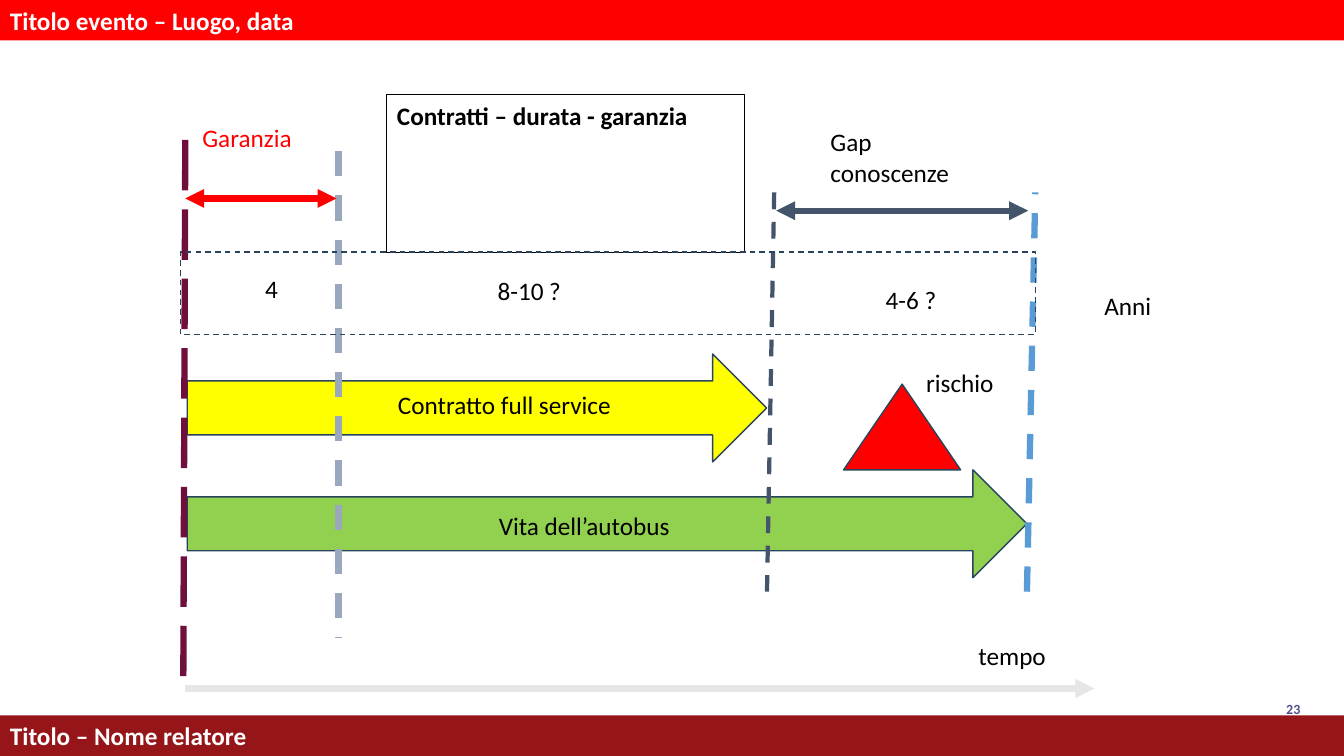
from lxml.etree import SubElement
from pptx import Presentation
from pptx.dml.color import RGBColor as Rgb
from pptx.enum.dml import MSO_LINE as Dash
from pptx.enum.shapes import MSO_CONNECTOR as Conn, MSO_SHAPE as Kind
from pptx.enum.text import MSO_ANCHOR as Anchor, MSO_AUTO_SIZE as Auto, PP_ALIGN as Align
from pptx.oxml.ns import qn
from pptx.util import Cm, Pt

HUES = {
    "red": "FF0000", "brick": "961518", "white": "FFFFFF", "black": "000000",
    "violet": "4F4F8A", "green": "92D050", "yellow": "FFFF00", "edge": "28445D",
    "plum": "6F103C", "mist": "99A8BD", "slate": "44546A", "blue": "5B9BD5",
    "pale": "E7E6E6",
}


class Board:
    """Holds the text style and the slide being drawn."""

    def __init__(self, slide, font="Calibri", size=18):
        self.slide, self.font, self.size = slide, font, size

    def hue(self, name):
        return Rgb.from_string(HUES[name])

    def put(self, shape, text, color="black", bold=False, size=None,
            align=Align.LEFT, wrap=False, anchor=Anchor.TOP):
        frame = shape.text_frame
        frame.text = text
        frame.word_wrap = wrap
        frame.auto_size = Auto.NONE if wrap else Auto.SHAPE_TO_FIT_TEXT
        frame.vertical_anchor = anchor
        for para in frame.paragraphs:
            para.alignment = align
            for run in para.runs:
                font = run.font
                font.name, font.size, font.bold = self.font, Pt(size or self.size), bold
                font.color.rgb = self.hue(color)

    def title(self, text, *box):
        shape = self.slide.shapes.title
        shape.left, shape.top, shape.width, shape.height = map(Cm, box)
        shape.line.color.rgb = self.hue("black")
        shape.line.width = Pt(0.75)
        self.put(shape, text, bold=True)

    def label(self, text, x, y, w, h=1.02, **style):
        box = self.slide.shapes.add_textbox(Cm(x), Cm(y), Cm(w), Cm(h))
        self.put(box, text, **style)

    def shape(self, kind, box, fill=None, edge="edge", dash=None):
        shape = self.slide.shapes.add_shape(kind, *map(Cm, box))
        shape.shadow.inherit = False
        if fill:
            shape.fill.solid()
            shape.fill.fore_color.rgb = self.hue(fill)
        else:
            shape.fill.background()
        if edge:
            shape.line.color.rgb = self.hue(edge)
            shape.line.width = Pt(1)
            shape.line.dash_style = dash
        else:
            shape.line.fill.background()
        return shape

    def band(self, text, top, fill):
        bar = self.shape(Kind.RECTANGLE, (0, top, 33.87, 1.02), fill, None)
        self.put(bar, text, "white", True, wrap=True, anchor=Anchor.MIDDLE)

    def line(self, start, end, color, width=4.5, dash=None, tips=()):
        link = self.slide.shapes.add_connector(
            Conn.STRAIGHT, *map(Cm, start + end))
        link.line.color.rgb = self.hue(color)
        link.line.width = Pt(width)
        link.line.dash_style = dash
        props = link.element.spPr
        for tip in tips:
            SubElement(props.find(qn("a:ln")), qn(f"a:{tip}End"), type="triangle")
        SubElement(props, qn("a:effectLst"))


def main():
    deck = Presentation()
    deck.slide_width, deck.slide_height = Cm(33.87), Cm(19.05)
    board = Board(deck.slides.add_slide(deck.slide_layouts[5]))

    board.band("Titolo evento – Luogo, data", 0, "red")
    board.band("Titolo – Nome relatore", 18.03, "brick")
    board.title("Contratti – durata - garanzia", 9.75, 2.39, 9.02, 1.02)
    board.label("23", 31.32, 17.53, 1.7, 1.27, color="violet", bold=True,
                size=10, align=Align.RIGHT, wrap=True)

    board.shape(Kind.RIGHT_ARROW, (4.72, 11.84, 21.16, 2.72), "green")
    board.shape(Kind.RIGHT_ARROW, (4.72, 8.92, 14.6, 2.72), "yellow")

    both = ("head", "tail")
    board.line((4.62, 17.04), (4.67, 3.18), "plum", dash=Dash.LONG_DASH)
    board.line((8.53, 3.81), (8.53, 16.08), "mist", dash=Dash.DASH)
    board.line((4.67, 5), (8.48, 5), "red", tips=both)
    board.line((19.51, 4.85), (19.33, 14.91), "slate", 3, Dash.DASH)
    board.line((25.88, 14.91), (26.09, 4.85), "blue", dash=Dash.DASH)
    board.line((19.56, 5.31), (25.91, 5.31), "slate", tips=both)
    board.line((4.67, 17.35), (27.58, 17.35), "pale", tips=("tail",))

    board.shape(Kind.RECTANGLE, (4.55, 6.35, 21.54, 2.08), dash=Dash.DASH)
    board.shape(Kind.ISOSCELES_TRIANGLE, (21.26, 9.68, 2.95, 2.16), "red")

    board.label("Garanzia", 4.85, 2.95, 3.3, color="red")
    board.label("Gap\nconoscenze", 20.68, 3.07, 4.11, 1.8)
    for text, x, y, w in (
        ("4", 6.43, 6.76, 0.86),
        ("8-10 ?", 12.29, 6.81, 2.34),
        ("4-6 ?", 22.07, 7.04, 1.98),
        ("Anni", 27.58, 7.19, 1.8),
        ("Contratto full service", 9.78, 9.68, 6.35),
        ("rischio", 23.09, 9.12, 2.24),
        ("Vita dell’autobus", 12.32, 12.73, 5.2),
        ("tempo", 24.41, 16, 2.29),
    ):
        board.label(text, x, y, w)

    deck.save("out.pptx")


if __name__ == "__main__":
    main()
